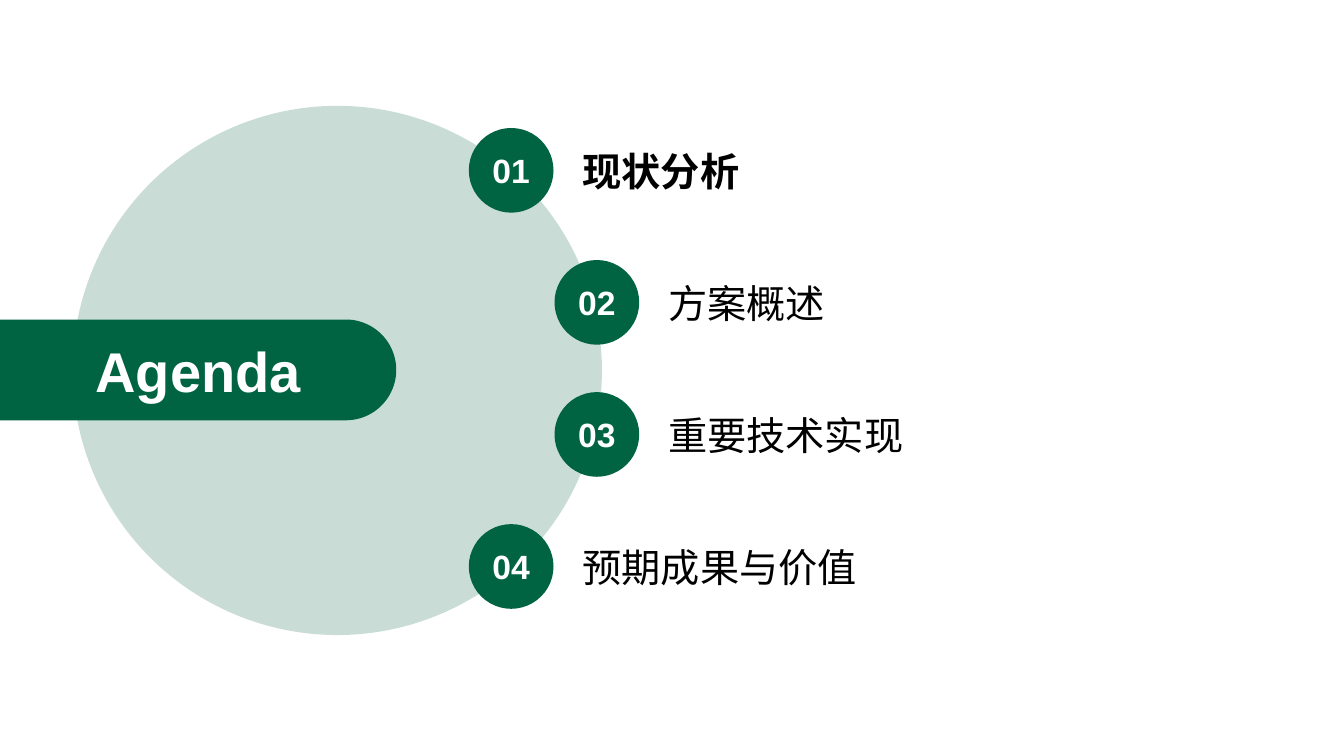
from lxml import etree
from pptx import Presentation
from pptx.dml.color import RGBColor
from pptx.enum import shapes, text
from pptx.oxml import ns
from pptx.util import Pt

HEADING = "Agenda"
TOPICS = [
    ("01", "现状分析", 465, True),
    ("02", "方案概述", 550, False),
    ("03", "重要技术实现", 550, False),
    ("04", "预期成果与价值", 465, False),
]

GREEN = RGBColor(0x00, 0x63, 0x41)
WHITE = RGBColor(0xFF, 0xFF, 0xFF)
BLACK = RGBColor(0x00, 0x00, 0x00)
FONT = "Arial"

PX = 9144
SLIDE_W, SLIDE_H = 1333, 750
DISC = (72, 105, 525, 525)
BANNER_TOP, BANNER_W, BANNER_H = 317, 393, 100
BADGE_TOP, BADGE_STEP, BADGE_SIZE = 127, 131, 84
LABEL_DX, LABEL_DY, LABEL_W, LABEL_H = 103, 14, 375, 57


def box(*lengths):
    return [round(length * PX) for length in lengths]


def add_green(slide, preset, *place):
    shape = slide.shapes.add_shape(preset, *box(*place))
    shape.shadow.inherit = False
    shape.fill.solid()
    shape.fill.fore_color.rgb = GREEN
    shape.line.fill.background()
    return shape


def write(frame, words, size, color, bold, align, wrap):
    frame.word_wrap = wrap
    paragraph = frame.paragraphs[0]
    paragraph.alignment = align
    run = paragraph.add_run()
    run.text = words
    run.font.name = FONT
    run.font.size = Pt(size)
    run.font.bold = bold
    run.font.color.rgb = color


def add_banner(slide):
    banner = add_green(
        slide, shapes.MSO_SHAPE.ROUND_2_SAME_RECTANGLE,
        (BANNER_W - BANNER_H) / 2, BANNER_TOP - (BANNER_W - BANNER_H) / 2,
        BANNER_H, BANNER_W)
    banner.adjustments[0] = 0.5
    banner.rotation = 90

    heading = slide.shapes.title
    heading.left, heading.top, heading.width, heading.height = box(
        0, BANNER_TOP, BANNER_W, BANNER_H)
    frame = heading.text_frame
    frame.auto_size = text.MSO_AUTO_SIZE.NONE
    frame.vertical_anchor = text.MSO_ANCHOR.MIDDLE
    write(frame, HEADING, 40, WHITE, True, text.PP_ALIGN.CENTER, True)
    banner._element.addnext(heading._element)


def add_topic(slide, index, number, topic, left, current):
    top = BADGE_TOP + index * BADGE_STEP
    badge = add_green(slide, shapes.MSO_SHAPE.ROUNDED_RECTANGLE,
                      left, top, BADGE_SIZE, BADGE_SIZE)
    badge.adjustments[0] = 0.5
    badge.text_frame.vertical_anchor = text.MSO_ANCHOR.MIDDLE
    write(badge.text_frame, number, 24, WHITE, True, text.PP_ALIGN.CENTER, False)

    label = slide.shapes.add_textbox(
        *box(left + LABEL_DX, top + LABEL_DY, LABEL_W, LABEL_H))
    label.text_frame.auto_size = text.MSO_AUTO_SIZE.SHAPE_TO_FIT_TEXT
    write(label.text_frame, topic, 28, BLACK, current, text.PP_ALIGN.LEFT, True)


def main():
    deck = Presentation()
    deck.slide_width, deck.slide_height = box(SLIDE_W, SLIDE_H)
    slide = deck.slides.add_slide(deck.slide_layouts[5])

    disc = add_green(slide, shapes.MSO_SHAPE.OVAL, *DISC)
    disc_color = disc._element.spPr.find(
        ns.qn("a:solidFill")).find(ns.qn("a:srgbClr"))
    etree.SubElement(disc_color, ns.qn("a:alpha"), val="21000")

    add_banner(slide)
    for index, topic in enumerate(TOPICS):
        add_topic(slide, index, *topic)

    deck.save("out.pptx")


if __name__ == "__main__":
    main()
